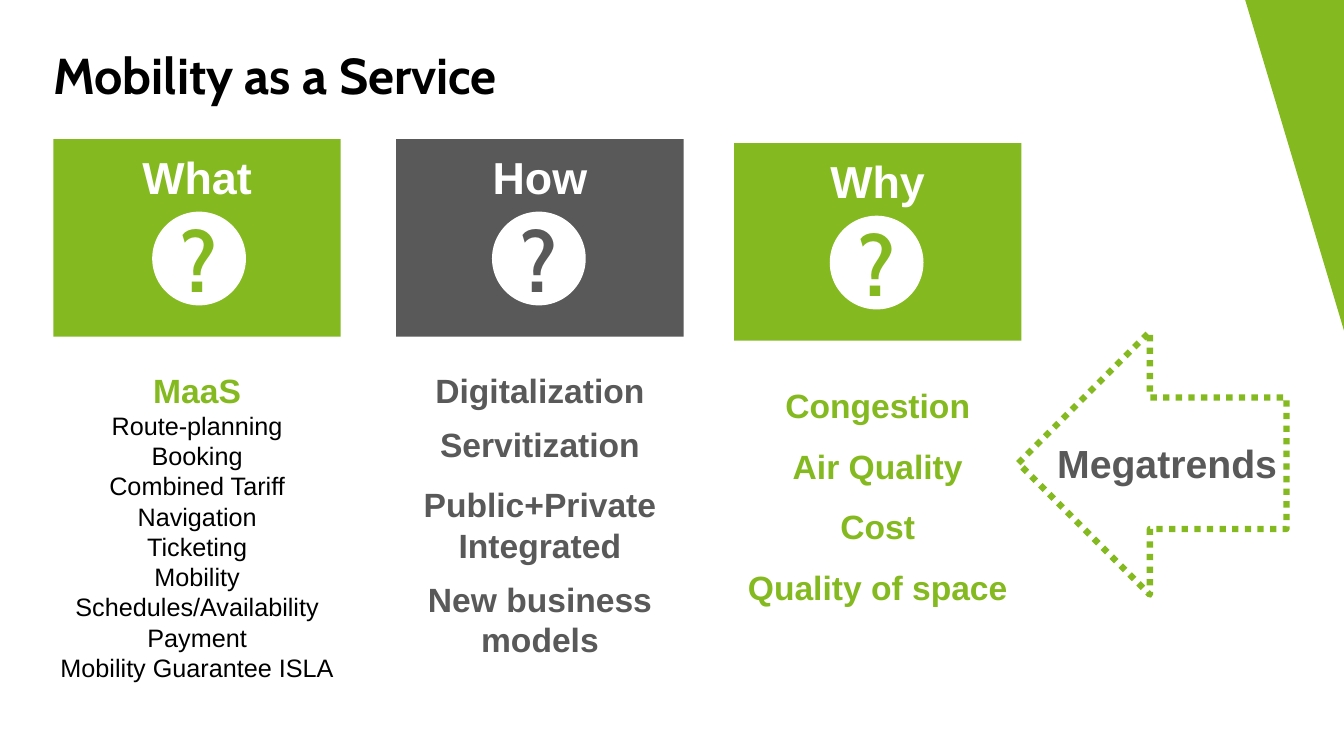
from dataclasses import dataclass

from pptx import Presentation
from pptx.dml.color import RGBColor
from pptx.enum.dml import MSO_LINE
from pptx.enum.shapes import MSO_SHAPE
from pptx.enum.text import MSO_ANCHOR, PP_ALIGN
from pptx.util import Emu, Pt

PX = 9144  # 100 px to the inch
SLIDE_WIDTH, SLIDE_HEIGHT = 1333, 750


@dataclass(frozen=True)
class Theme:
    green: str = "84BA1F"
    gray: str = "595959"
    white: str = "FFFFFF"
    black: str = "000000"
    body_font: str = "Arial"
    title_font: str = "Cabin"
    title: int = 36
    heading: int = 32
    badge: int = 60
    callout: int = 28
    topic: int = 24
    detail: int = 18


THEME = Theme()


def px(*lengths):
    return [Emu(length * PX) for length in lengths]


def write(shape, lines, size, color, bold=True, font=THEME.body_font,
          align=PP_ALIGN.CENTER, anchor=MSO_ANCHOR.TOP, wrap=True,
          spacing=None, before=None, first=None):
    """Fill a shape with lines; first holds (size, color, bold) of the first line."""
    frame = shape.text_frame
    frame.word_wrap = wrap
    frame.vertical_anchor = anchor
    for index, line in enumerate(lines):
        paragraph = frame.paragraphs[0] if index == 0 else frame.add_paragraph()
        paragraph.alignment = align
        if spacing:
            paragraph.line_spacing = spacing
        if before and index:
            paragraph.space_before = Pt(before[index - 1])
        run = paragraph.add_run()
        run.text = line
        line_size, line_color, line_bold = (
            first if first and index == 0 else (size, color, bold))
        run.font.name = font
        run.font.size = Pt(line_size)
        run.font.bold = line_bold
        run.font.color.rgb = RGBColor.from_string(line_color)


def add_text(slide, box, lines, **text_format):
    write(slide.shapes.add_textbox(*px(*box)), lines, **text_format)


def paint(shape, color):
    shape.shadow.inherit = False
    shape.fill.solid()
    shape.fill.fore_color.rgb = RGBColor.from_string(color)
    shape.line.fill.background()


def add_filled(slide, kind, box, color):
    shape = slide.shapes.add_shape(kind, *px(*box))
    paint(shape, color)
    return shape


def add_corner(slide, box):
    left, top, width, height = box
    builder = slide.shapes.build_freeform(left, top, scale=PX)
    builder.add_line_segments(
        [(left + width, top), (left + width, top + height)], close=True)
    paint(builder.convert_to_shape(), THEME.green)


def add_question_card(slide, box, heading, color, badge_left):
    left, top, width, _ = box
    add_filled(slide, MSO_SHAPE.RECTANGLE, box, color)
    add_text(slide, (left, top + 6, width, 64), [heading],
             size=THEME.heading, color=THEME.white, wrap=False)
    badge = add_filled(slide, MSO_SHAPE.OVAL,
                       (left + badge_left, top + 72, 93, 93), THEME.white)
    write(badge, ["?"], size=THEME.badge, color=color,
          font=THEME.title_font, anchor=MSO_ANCHOR.MIDDLE)


def add_megatrends_arrow(slide, box):
    left, top, width, _ = box
    arrow = slide.shapes.add_shape(MSO_SHAPE.LEFT_ARROW, *px(*box))
    arrow.shadow.inherit = False
    arrow.fill.background()
    arrow.line.color.rgb = RGBColor.from_string(THEME.green)
    arrow.line.width = Pt(4.5)
    arrow.line.dash_style = MSO_LINE.ROUND_DOT  # stored as sysDot
    add_text(slide, (left + 27, top + 102, 241, 57), ["Megatrends"],
             size=THEME.callout, color=THEME.gray, wrap=False)


def main():
    presentation = Presentation()
    presentation.slide_width, presentation.slide_height = px(SLIDE_WIDTH, SLIDE_HEIGHT)
    slide = presentation.slides.add_slide(presentation.slide_layouts[6])

    # Title and corner
    add_text(slide, (43, 34, 1244, 88), ["Mobility as a Service"],
             size=THEME.title, color=THEME.black, font=THEME.title_font,
             align=PP_ALIGN.LEFT, anchor=MSO_ANCHOR.MIDDLE, spacing=0.9)
    add_corner(slide, (SLIDE_WIDTH - 98, 0, 98, 328))

    # Question cards
    for left, top, heading, color, badge_left in (
            (53, 138, "What", THEME.green, 98),
            (393, 138, "How", THEME.gray, 95),
            (728, 142, "Why", THEME.green, 95)):
        add_question_card(slide, (left, top, 285, 196), heading, color, badge_left)

    # Megatrends
    add_megatrends_arrow(slide, (1010, 329, 266, 261))

    # Answers under the cards
    add_text(slide, (41, 362, 309, 325),
             ["MaaS", "Route-planning", "Booking", "Combined Tariff",
              "Navigation", "Ticketing", "Mobility", "Schedules/Availability",
              "Payment", "Mobility Guarantee ISLA"],
             size=THEME.detail, color=THEME.black, bold=False,
             first=(THEME.topic, THEME.green, True))
    add_text(slide, (393, 362, 285, 325),
             ["Digitalization", "Servitization", "Public+Private Integrated",
              "New business models"],
             size=THEME.topic, color=THEME.gray, before=(10, 14, 10))
    add_text(slide, (728, 357, 285, 325),
             ["Congestion", "Air Quality", "Cost", "Quality of space"],
             size=THEME.topic, color=THEME.green, spacing=1.5)

    presentation.save("out.pptx")


if __name__ == "__main__":
    main()
